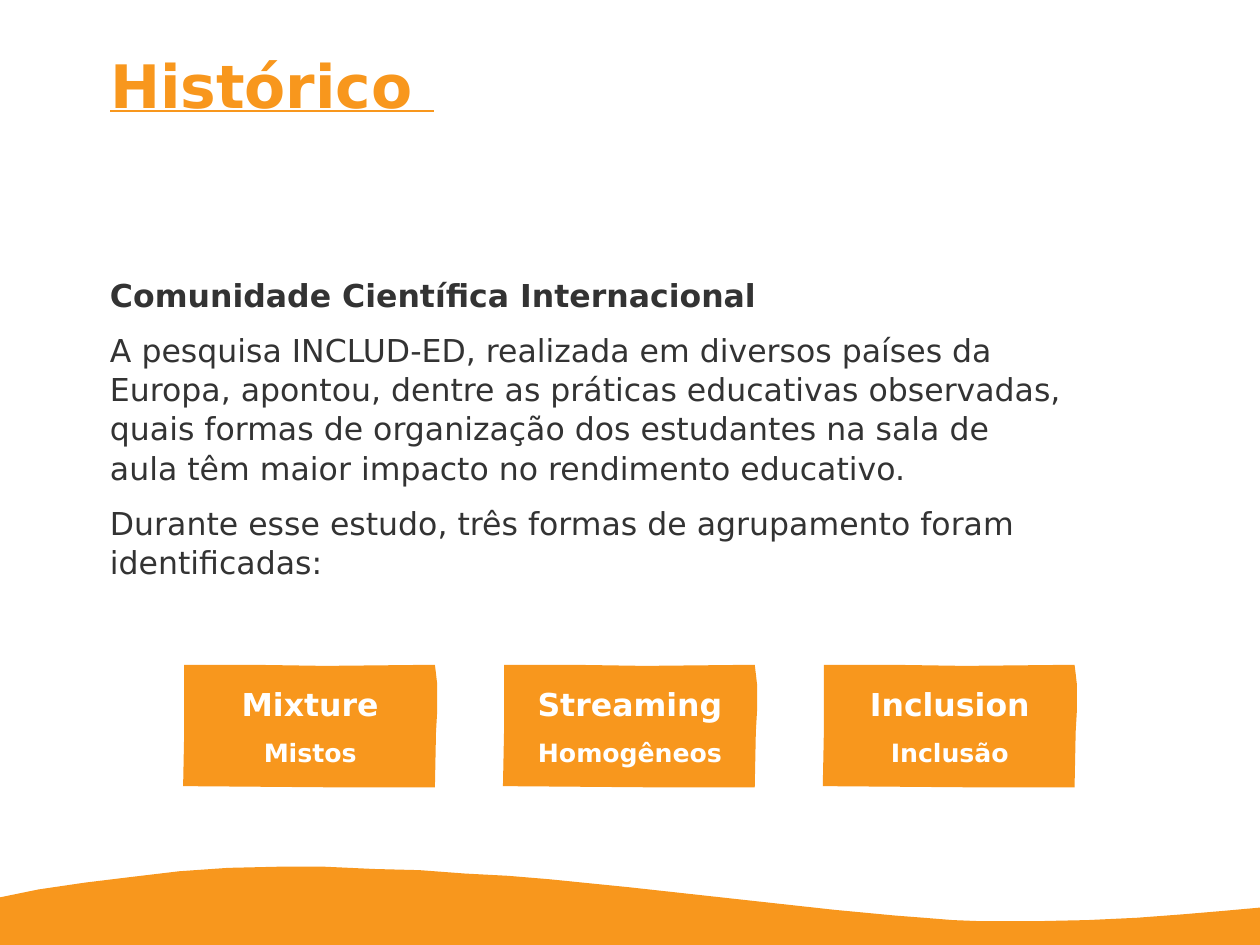
from pptx import Presentation
from pptx.dml.color import RGBColor
from pptx.enum.text import MSO_ANCHOR, PP_ALIGN
from pptx.util import Inches, Pt

LEFT, CENTER = PP_ALIGN.LEFT, PP_ALIGN.CENTER
TOP, MIDDLE = MSO_ANCHOR.TOP, MSO_ANCHOR.MIDDLE
WIDE, HIGH = 11.11, 8.33
FONT, ORANGE, GREY, WHITE = "DejaVu Sans", "F8971D", "333333", "FFFFFF"

TITLE = "Histórico "
HEAD = "Comunidade Científica Internacional"
BODY = [
    "A pesquisa INCLUD-ED, realizada em diversos países da Europa, apontou, "
    "dentre as práticas educativas observadas, quais formas de organização "
    "dos estudantes na sala de aula têm maior impacto no rendimento educativo.",
    "Durante esse estudo, três formas de agrupamento foram identificadas:",
]
CARDS = [("Mixture", "Mistos"), ("Streaming", "Homogêneos"),
         ("Inclusion", "Inclusão")]

# Outlines in inches: the wave on the slide, a card from its own corner
WAVE = [
    (0, 7.91), (0.34, 7.84), (0.75, 7.78), (1.16, 7.73), (1.58, 7.68),
    (2.01, 7.65), (2.44, 7.64), (2.87, 7.64), (3.3, 7.66), (3.7, 7.67),
    (4.1, 7.7), (4.48, 7.72), (4.84, 7.75), (5.54, 7.82), (7.36, 8.02),
    (7.89, 8.07), (8.15, 8.09), (8.4, 8.11), (8.65, 8.12), (9.13, 8.12),
    (9.59, 8.11), (10.02, 8.09), (10.42, 8.06), (10.78, 8.03), (WIDE, 8),
    (WIDE, HIGH), (0, HIGH),
]
CARD = [
    (0.01, 0), (0.6, 0), (1.25, 0.01), (2.22, 0), (2.23, 0.08), (2.24, 0.17),
    (2.24, 0.41), (2.23, 0.59), (2.22, 1.08), (1.28, 1.08), (0, 1.07),
    (0.01, 0.58), (0.01, 0.19),
]
CARD_W, CARD_Y, PITCH = 2.24, 5.86, 2.82
MARGIN = 0.97
UNITS = 100


def color(code):
    return RGBColor.from_string(code)


def apply(part, values):
    for name, value in values.items():
        setattr(part, name, value)


def outline(points, x=0, y=0):
    """Draw a closed outline; the pen keeps whole units only."""
    start, *rest = [(px * UNITS, py * UNITS) for px, py in points]
    pen = slide.shapes.build_freeform(*start, scale=Inches(1) / UNITS)
    pen.add_line_segments(rest, close=True)
    shape = pen.convert_to_shape(Inches(x), Inches(y))
    shape.shadow.inherit = False
    shape.fill.solid()
    shape.fill.fore_color.rgb = color(ORANGE)
    shape.line.fill.background()
    return shape


def write(shape, lines, tone, anchor=TOP):
    """Fill a shape with (text, font values, paragraph values) lines."""
    frame = shape.text_frame
    apply(frame, dict(word_wrap=True, vertical_anchor=anchor, margin_left=0,
                      margin_right=0, margin_top=0, margin_bottom=0))
    for i, (text, face, form) in enumerate(lines):
        para = frame.add_paragraph() if i else frame.paragraphs[0]
        apply(para, form)
        run = para.add_run()
        run.text = text
        apply(run.font, {"name": FONT, **face})
        run.font.color.rgb = color(tone)


def box(x, y, w, h):
    return slide.shapes.add_textbox(*map(Inches, (x, y, w, h)))


deck = Presentation()
apply(deck, dict(slide_width=Inches(WIDE), slide_height=Inches(HIGH)))
# The preset 4:3 type would override the custom size
deck.element.sldSz.attrib.pop("type", None)
slide = deck.slides.add_slide(deck.slide_layouts[6])

outline(WAVE)
write(box(MARGIN, 0.43, 9.19, 0.63),
      [(TITLE, dict(size=Pt(38), bold=True, underline=True),
        dict(alignment=LEFT, line_spacing=Pt(45.5)))], ORANGE)

plain = dict(size=Pt(20), bold=False)
flow = dict(alignment=LEFT, line_spacing=1.04, space_before=Pt(10))
write(box(MARGIN, 2.43, 8.43, 2.7),
      [(HEAD, dict(size=Pt(20), bold=True), dict(alignment=LEFT))]
      + [(text, plain, flow) for text in BODY], GREY)

first = (WIDE - CARD_W) / 2 - PITCH
for i, (name, gloss) in enumerate(CARDS):
    card = outline(CARD, first + i * PITCH, CARD_Y)
    write(card,
          [(name, dict(size=Pt(20), bold=True), dict(alignment=CENTER)),
           (gloss, dict(size=Pt(16), bold=True),
            dict(alignment=CENTER, space_before=Pt(9)))], WHITE, MIDDLE)

deck.save("out.pptx")
